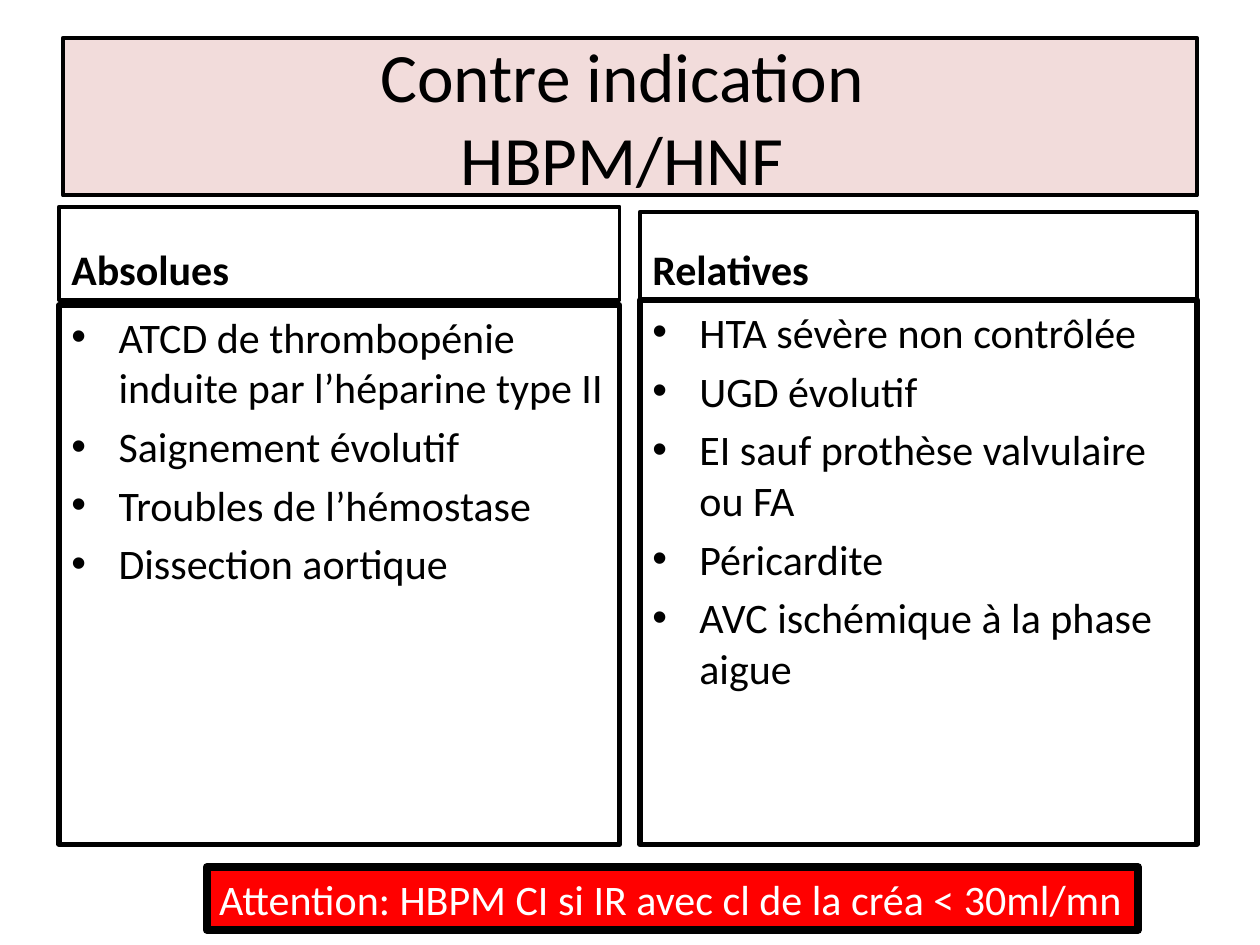
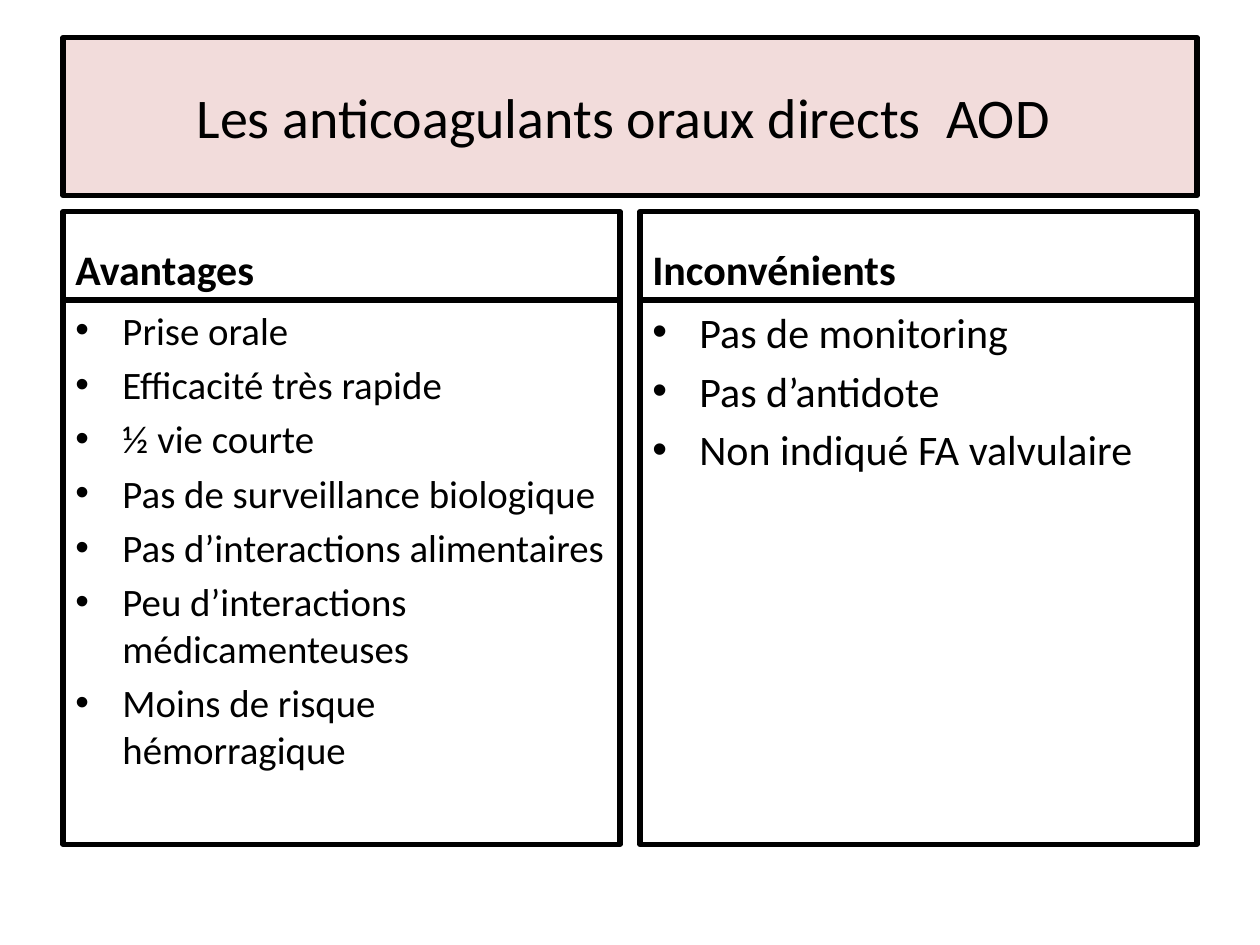
import pptx
import pptx.util
import pptx.dml.color
import pptx.enum.text
import pptx.oxml.ns
import lxml.etree

Cm, Pt = pptx.util.Cm, pptx.util.Pt
ANCHOR = pptx.enum.text.MSO_ANCHOR

# Shared style
COLORS = {"ink": "000000", "band": "F2DCDB", "alert": "FF0000", "light": "FFFFFF"}
FONT = "Calibri"
TITLE_PLACE = (1.27, 0.76, 22.86, 3.18)
INDENT = Cm(0.95)
COLUMN_BOTTOM = 17.02
SPACING = 0.2  # space before a paragraph, as a share of its text size

# Column frames in cm: left, width, header top, header bottom, list top
LEFT = (1.27, 11.23, 4.27, 6.05, 6.05)
LEFT_SHIFTED = (1.19, 11.3, 4.17, 6.05, 6.15)
RIGHT = (12.9, 11.23, 4.27, 6.05, 6.05)

# Content
SLIDES = [
    {
        "title": ["Contre indication ", "HBPM/HNF "],
        "title_size": 39.6,
        "head_line": 2.25,
        "columns": [
            {"head": "Absolues", "frame": LEFT_SHIFTED, "size": 24, "items": [
                "ATCD de thrombopénie induite par l’héparine type II",
                "Saignement évolutif",
                "Troubles de l’hémostase",
                "Dissection aortique",
            ]},
            {"head": "Relatives", "frame": RIGHT, "size": 24, "items": [
                "HTA sévère non contrôlée",
                "UGD évolutif",
                "EI sauf prothèse valvulaire ou FA",
                "Péricardite",
                "AVC ischémique à la phase aigue",
            ]},
        ],
        "alert": "Attention: HBPM CI si IR avec cl de la créa < 30ml/mn",
    },
    {
        "title": ["Les anticoagulants oraux directs  AOD "],
        "title_size": 32,
        "head_line": 3,
        "columns": [
            {"head": "Avantages", "frame": LEFT, "size": 22.2, "items": [
                "Prise orale",
                "Efficacité très rapide",
                "½ vie courte",
                "Pas de surveillance biologique",
                "Pas d’interactions alimentaires",
                "Peu d’interactions médicamenteuses",
                "Moins de risque hémorragique",
            ]},
            {"head": "Inconvénients", "frame": RIGHT, "size": 24, "items": [
                "Pas de monitoring",
                "Pas d’antidote",
                "Non indiqué FA valvulaire",
            ]},
        ],
    },
]
ALERT_PLACE = (4.17, 17.48, 18.77, 1.27)


def color(name):
    return pptx.dml.color.RGBColor.from_string(COLORS[name])


def frame_shape(shape, line_width, fill=None):
    shape.line.color.rgb = color("ink")
    shape.line.width = Pt(line_width)
    if fill:
        shape.fill.solid()
        shape.fill.fore_color.rgb = color(fill)


def add_span(para, text, size, ink="ink", bold=False):
    span = para.add_run()
    span.text = text
    span.font.name = FONT
    span.font.size = Pt(size)
    span.font.bold = bold
    span.font.color.rgb = color(ink)


def add_bullet(para):
    properties = para._p.get_or_add_pPr()
    properties.set("marL", str(INDENT))
    properties.set("indent", str(-INDENT))
    for tag, name, value in (("a:buFont", "typeface", "Arial"), ("a:buChar", "char", "•")):
        element = lxml.etree.SubElement(properties, pptx.oxml.ns.qn(tag))
        element.set(name, value)


def add_box(page, place, line_width, anchor=ANCHOR.TOP, fill=None, wrap=True):
    box = page.shapes.add_textbox(*map(Cm, place))
    frame_shape(box, line_width, fill)
    box.text_frame.word_wrap = wrap
    box.text_frame.vertical_anchor = anchor
    return box.text_frame


def add_title(page, lines, size, line_width):
    title = page.shapes.title
    title.left, title.top, title.width, title.height = map(Cm, TITLE_PLACE)
    frame_shape(title, line_width, "band")
    frame = title.text_frame
    frame.auto_size = pptx.enum.text.MSO_AUTO_SIZE.NONE
    frame.vertical_anchor = ANCHOR.MIDDLE
    para = frame.paragraphs[0]
    para.alignment = pptx.enum.text.PP_ALIGN.CENTER
    for number, line in enumerate(lines):
        if number:
            para.add_line_break()
        add_span(para, line, size)


def add_column(page, column, head_line):
    left, width, head_top, head_bottom, list_top = column["frame"]

    # Heading
    head = add_box(page, (left, head_top, width, head_bottom - head_top),
                   head_line, ANCHOR.BOTTOM)
    add_span(head.paragraphs[0], column["head"], 24, bold=True)

    # Bulleted list
    body = add_box(page, (left, list_top, width, COLUMN_BOTTOM - list_top), 3)
    for number, item in enumerate(column["items"]):
        para = body.add_paragraph() if number else body.paragraphs[0]
        add_bullet(para)
        if number:
            para.space_before = Pt(round(SPACING * column["size"], 1))
        add_span(para, item, column["size"])


def main():
    deck = pptx.Presentation()
    deck.slide_width, deck.slide_height = Cm(25.4), Cm(19.05)
    title_only = deck.slide_layouts[5]
    for content in SLIDES:
        page = deck.slides.add_slide(title_only)
        add_title(page, content["title"], content["title_size"], content["head_line"])
        for column in content["columns"]:
            add_column(page, column, content["head_line"])
        if "alert" in content:
            alert = add_box(page, ALERT_PLACE, 4.5, fill="alert", wrap=False)
            add_span(alert.paragraphs[0], content["alert"], 24, "light")
    deck.save("out.pptx")


if __name__ == "__main__":
    main()
